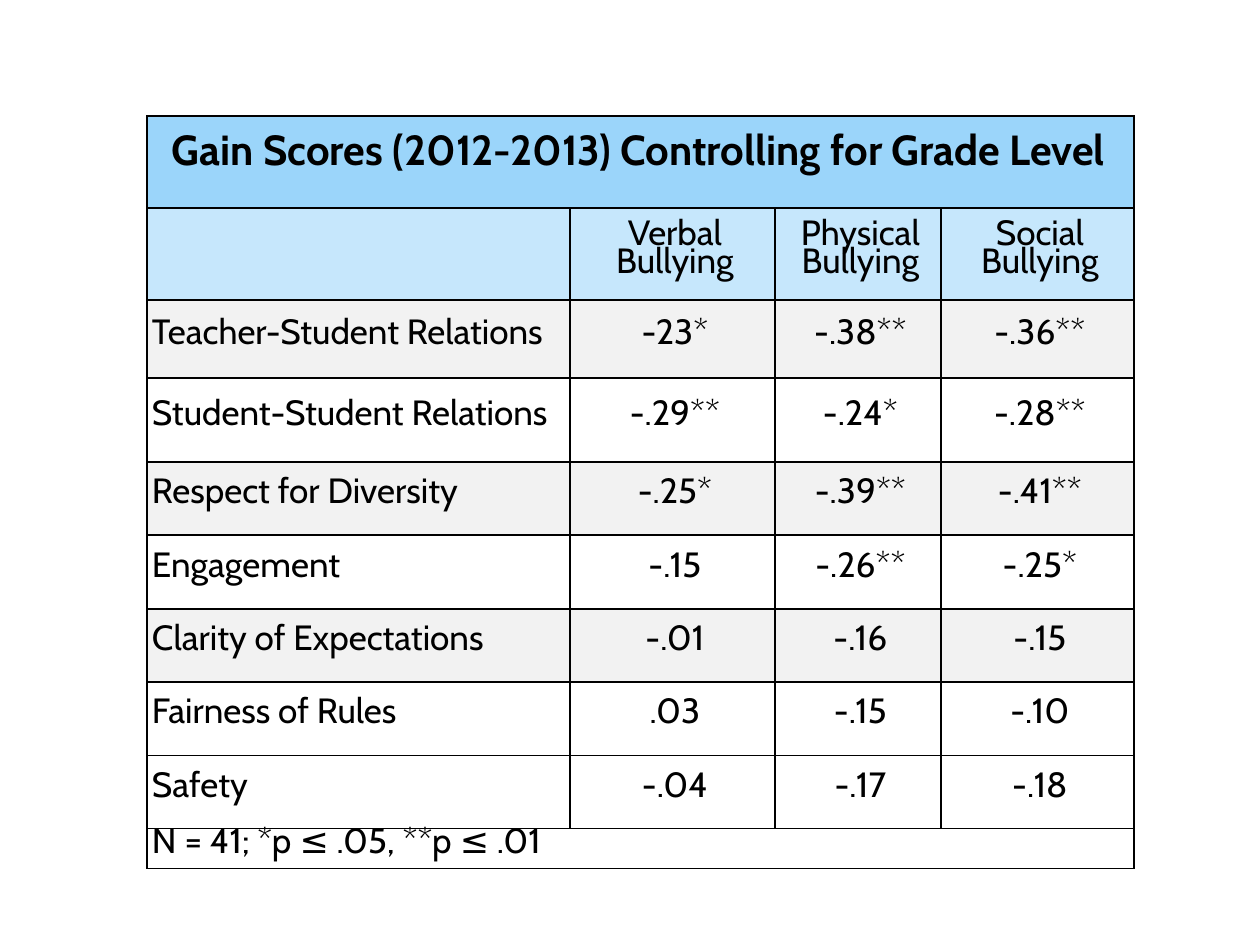
from pptx import Presentation
from pptx.dml.color import RGBColor
from pptx.enum.text import MSO_ANCHOR, PP_ALIGN
from pptx.oxml import parse_xml
from pptx.oxml.ns import nsdecls
from pptx.util import Emu, Pt

PX = 914400 // 126
COLS = [423, 205, 166, 193]
ROWS = [92, 92, 78, 84, 73, 74, 73, 74, 73, 40]
TITLE = "Gain Scores (2012-2013) Controlling for Grade Level "
HEADINGS = ["", "Verbal Bullying", "Physical Bullying", "Social Bullying"]
SCORES = [
    ["Teacher-Student Relations", "-23*", "-.38**", "-.36**"],
    ["Student-Student Relations", "-.29**", "-.24*", "-.28**"],
    ["Respect for Diversity", "-.25*", "-.39**", "-.41**"],
    ["Engagement", "-.15", "-.26**", "-.25*"],
    ["Clarity of Expectations", "-.01", "-.16", "-.15"],
    ["Fairness of Rules", ".03", "-.15", "-.10"],
    ["Safety", "-.04", "-.17", "-.18"],
]
NOTE = "N = 41; *p ≤ .05, **p ≤ .01"
FILLS = ["9BD5FA", "C6E7FC"] + ["F2F2F2", "FFFFFF"] * 3 + ["FFFFFF"] * 2
BODY = {"name": "Cabin", "size": Pt(20), "bold": False}
HEAD = {"name": "Cabin", "size": Pt(24), "bold": True}
CELL = {"margin_left": 0, "margin_right": 0, "margin_top": 0, "margin_bottom": 0,
        "vertical_anchor": MSO_ANCHOR.MIDDLE}


def px(n):
    """Turn whole pixels into EMU."""
    return Emu(n * PX)


def paint(color, value):
    """Set a colour format from a hex string."""
    color.rgb = RGBColor.from_string(value)


def apply(obj, values):
    """Set every attribute in a dict of format values."""
    for name, value in values.items():
        setattr(obj, name, value)


def style_cell(cell, fill, line="000000"):
    """Give a cell its margins, thin borders and fill."""
    apply(cell, CELL)
    tc_pr = cell._tc.get_or_add_tcPr()
    for side in "LRTB":
        tc_pr.append(parse_xml(
            f'<a:ln{side} {nsdecls("a")} w="12700"><a:solidFill>'
            f'<a:srgbClr val="{line}"/></a:solidFill></a:ln{side}>'))
    cell.fill.solid()
    paint(cell.fill.fore_color, fill)


def write_cell(cell, text, align, font):
    """Write one tightly spaced, slightly indented line of text."""
    p = cell.text_frame.paragraphs[0]
    apply(p, {"alignment": align, "line_spacing": Pt(16)})
    p._p.get_or_add_pPr().set("marL", str(px(5)))
    apply(p.font, font)
    if text:
        r = p.add_run()
        r.text = text
        apply(r.font, font)
        paint(r.font.color, "000000")


def add_score_table(s, left, top):
    """Place the table of gain scores with its title and note rows."""
    grid = [[TITLE], HEADINGS, *SCORES, [NOTE]]
    table = s.shapes.add_table(len(ROWS), len(COLS), px(left), px(top),
                               px(sum(COLS)), px(sum(ROWS))).table
    apply(table, {"first_row": False, "horz_banding": False})
    for column, width in zip(table.columns, COLS):
        column.width = px(width)
    for i, (texts, height, fill) in enumerate(zip(grid, ROWS, FILLS)):
        table.rows[i].height = px(height)
        for j in range(len(COLS)):
            style_cell(table.cell(i, j), fill)
        for j, text in enumerate(texts):
            align = PP_ALIGN.LEFT if i > 1 and j == 0 else PP_ALIGN.CENTER
            write_cell(table.cell(i, j), text, align, BODY if i else HEAD)
        if len(texts) == 1:
            table.cell(i, 0).merge(table.cell(i, len(COLS) - 1))


def main():
    """Build and save the slide."""
    prs = Presentation()
    apply(prs, {"slide_width": px(1260), "slide_height": px(945)})
    s = prs.slides.add_slide(prs.slide_layouts[6])
    add_score_table(s, 147, 116)
    prs.save("out.pptx")


if __name__ == "__main__":
    main()
